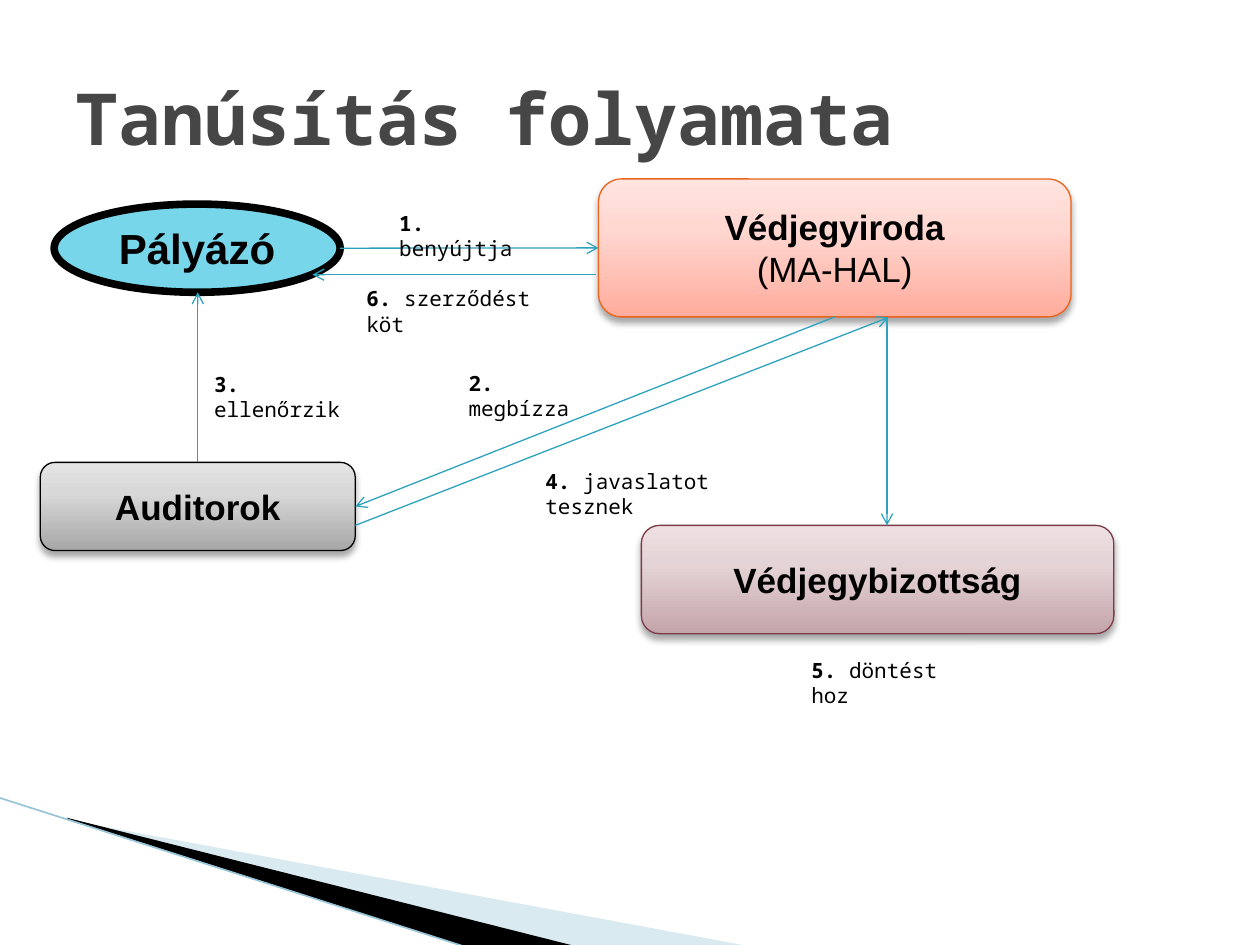
from copy import deepcopy
from dataclasses import dataclass

from lxml.etree import SubElement
from pptx import Presentation
from pptx.dml.color import RGBColor as Rgb
from pptx.enum.shapes import MSO_CONNECTOR as Link, MSO_SHAPE as Preset
from pptx.enum.text import MSO_ANCHOR as Anchor, PP_ALIGN as Align
from pptx.oxml.ns import qn
from pptx.util import Inches, Pt


@dataclass(frozen=True)
class Theme:
    sans: str = "Arial"
    mono: str = "Noto Sans Mono"
    title_size: int = 41
    applicant_size: int = 24
    node_size: int = 20
    label_size: int = 12
    title: str = "464646"
    ink: str = "000000"
    arrow: str = "2DA2BF"
    applicant: str = "78D6EA"
    bureau: tuple = ("FFAC9C", "FFD8D2", "FFE4DF")
    bureau_edge: str = "EB641B"
    committee: tuple = ("C4A5A9", "E5D4D7", "EEE0E2")
    committee_edge: str = "7D3C4A"
    auditors: tuple = ("A7A7A7", "D8D8D8", "E4E4E4")
    pale_wing: str = "A0CBDC"
    wing_edge: str = "97C5D8"


@dataclass(frozen=True)
class Box:
    col: float
    row: float
    cols: float
    rows: float

    def point(self, col, row):
        return grid(self.col + col), grid(self.row + row)

    def area(self, col, row, cols, rows):
        return *self.point(col, row), grid(cols), grid(rows)


THEME = Theme()
CELLS_PER_INCH = 10
STOPS = (0, 0.65, 1)
TOP, LEFT, BOTTOM, RIGHT = range(4)


def grid(cells):
    return Inches(cells / CELLS_PER_INCH)


def write(shape, runs, font, size, color=THEME.ink, align=Align.LEFT, anchor=Anchor.TOP):
    frame = shape.text_frame
    frame.word_wrap = True
    frame.vertical_anchor = anchor
    paragraph = frame.paragraphs[0]
    paragraph.alignment = align
    for index, (text, bold) in enumerate(runs):
        if index and text.startswith("\n"):
            paragraph.add_line_break()
        run = paragraph.add_run()
        run.text = text.lstrip("\n")
        run.font.name = font
        run.font.size = Pt(size)
        run.font.bold = bold
        run.font.color.rgb = Rgb.from_string(color)


def paint_gradient(shape, colors):
    shape.fill.gradient()
    shape.fill.gradient_angle = 90
    stop_list = shape._element.spPr.find(f".//{qn('a:gsLst')}")
    stop_list.append(deepcopy(stop_list[0]))
    for stop, position, color in zip(shape.fill.gradient_stops, STOPS, colors):
        stop.position = position
        stop.color.rgb = Rgb.from_string(color)


def cast_shadow(shape):
    effects = shape._element.spPr.find(qn("a:effectLst"))
    shadow = SubElement(effects, qn("a:outerShdw"), blurRad=str(Pt(4)), dist=str(Pt(3)),
                        dir="5400000", rotWithShape="0")
    color = SubElement(shadow, qn("a:srgbClr"), val=THEME.ink)
    SubElement(color, qn("a:alpha"), val="35000")


def add_node(slide, area, preset, runs, fill, edge, size=THEME.node_size, width=0.75):
    node = slide.shapes.add_shape(preset, *area)
    node.shadow.inherit = False
    if isinstance(fill, tuple):
        paint_gradient(node, fill)
        cast_shadow(node)
    else:
        node.fill.solid()
        node.fill.fore_color.rgb = Rgb.from_string(fill)
    node.line.color.rgb = Rgb.from_string(edge)
    node.line.width = Pt(width)
    write(node, runs, THEME.sans, size, align=Align.CENTER, anchor=Anchor.MIDDLE)
    return node


def add_line(slide, start, end, color, width, arrow=False):
    line = slide.shapes.add_connector(Link.STRAIGHT, *start, *end)
    line.line.color.rgb = Rgb.from_string(color)
    line.line.width = Pt(width)
    if arrow:
        SubElement(line.line._get_or_add_ln(), qn("a:tailEnd"), type="arrow")
    SubElement(line._element.spPr, qn("a:effectLst"))
    return line


def add_wing(slide, points, color, opacity=100):
    builder = slide.shapes.build_freeform(*points[0], scale=1)
    builder.add_line_segments(points[1:], close=True)
    wing = builder.convert_to_shape()
    wing.shadow.inherit = False
    wing.fill.solid()
    wing.fill.fore_color.rgb = Rgb.from_string(color)
    wing.line.fill.background()
    if opacity < 100:
        rgb = wing._element.spPr.find(f".//{qn('a:srgbClr')}")
        SubElement(rgb, qn("a:alpha"), val=str(opacity * 1000))


def draw_backdrop(slide, box):
    pale = [(5.5, 2.1), (59.5, 12.1), (45.6, 12.1), (5.5, 2)]
    dark = [(5.3, 1.9), (45.7, 12.1), (37.2, 12.2), (5.4, 2)]
    add_wing(slide, [box.point(*p) for p in pale], THEME.pale_wing, 40)
    add_wing(slide, [box.point(*p) for p in dark], THEME.ink)
    add_line(slide, box.point(-0.1, 0.3), box.point(37.1, 12.2), THEME.wing_edge, 0.95)


def draw_title(slide, box):
    title = slide.shapes.add_textbox(*box.area(0, 0, box.cols, box.rows))
    write(title, [("Tanúsítás folyamata", True)], THEME.mono, THEME.title_size,
          color=THEME.title, anchor=Anchor.MIDDLE)


def draw_process(slide, box):
    add_node(slide, box.area(1.3, 2.2, 22.7, 7), Preset.OVAL, [("Pályázó", True)],
             THEME.applicant, THEME.ink, THEME.applicant_size, 4.33)
    bureau = add_node(slide, box.area(44.5, 0.2, 37.5, 10.95), Preset.ROUNDED_RECTANGLE,
                      [("Védjegyiroda", True), ("\n(MA-HAL)", False)],
                      THEME.bureau, THEME.bureau_edge)
    add_node(slide, box.area(47.9, 27.7, 37.5, 8.6), Preset.ROUNDED_RECTANGLE,
             [("Védjegybizottság", True)], THEME.committee, THEME.committee_edge)
    auditors = add_node(slide, box.area(0.2, 22.7, 25, 7), Preset.ROUNDED_RECTANGLE,
                        [("Auditorok", True)], THEME.auditors, THEME.ink)

    arrows = [
        ((24, 5.7), (44.5, 5.7), None, (bureau, LEFT)),
        ((63.2, 11.2), (25.2, 26.2), (bureau, BOTTOM), (auditors, RIGHT)),
        ((12.7, 22.7), (12.7, 9.2), (auditors, TOP), None),
        ((67.4, 11.2), (67.4, 27.7), None, None),
        ((44.3, 7.8), (21.8, 7.8), None, None),
        ((25.2, 27.7), (67.5, 11.2), None, None),
    ]
    for start, end, source, target in arrows:
        arrow = add_line(slide, box.point(*start), box.point(*end), THEME.arrow, 0.75, True)
        if source:
            arrow.begin_connect(*source)
        if target:
            arrow.end_connect(*target)

    steps = [
        ("benyújtja", 27.7, 2.2, 11.7),
        ("megbízza", 33.2, 14.9, 12.1),
        ("ellenőrzik", 13, 15, 12.2),
        ("javaslatot tesznek", 39.3, 22.7, 18.8),
        ("döntést hoz", 60.4, 37.7, 14.1),
        ("szerződést köt", 25.1, 8.2, 16.3),
    ]
    for number, (step, col, row, cols) in enumerate(steps, 1):
        label = slide.shapes.add_textbox(*box.area(col, row, cols, 3))
        write(label, [(f"{number}. ", True), (step, False)], THEME.mono, THEME.label_size)


def main():
    deck = Presentation()
    deck.slide_width, deck.slide_height = grid(100), grid(75)
    slide = deck.slides.add_slide(deck.slide_layouts[6])
    draw_backdrop(slide, Box(0, 63, 60, 12))
    draw_title(slide, Box(5, 3, 90, 12.5))
    draw_process(slide, Box(3, 14, 86, 43))
    deck.save("out.pptx")


if __name__ == "__main__":
    main()
